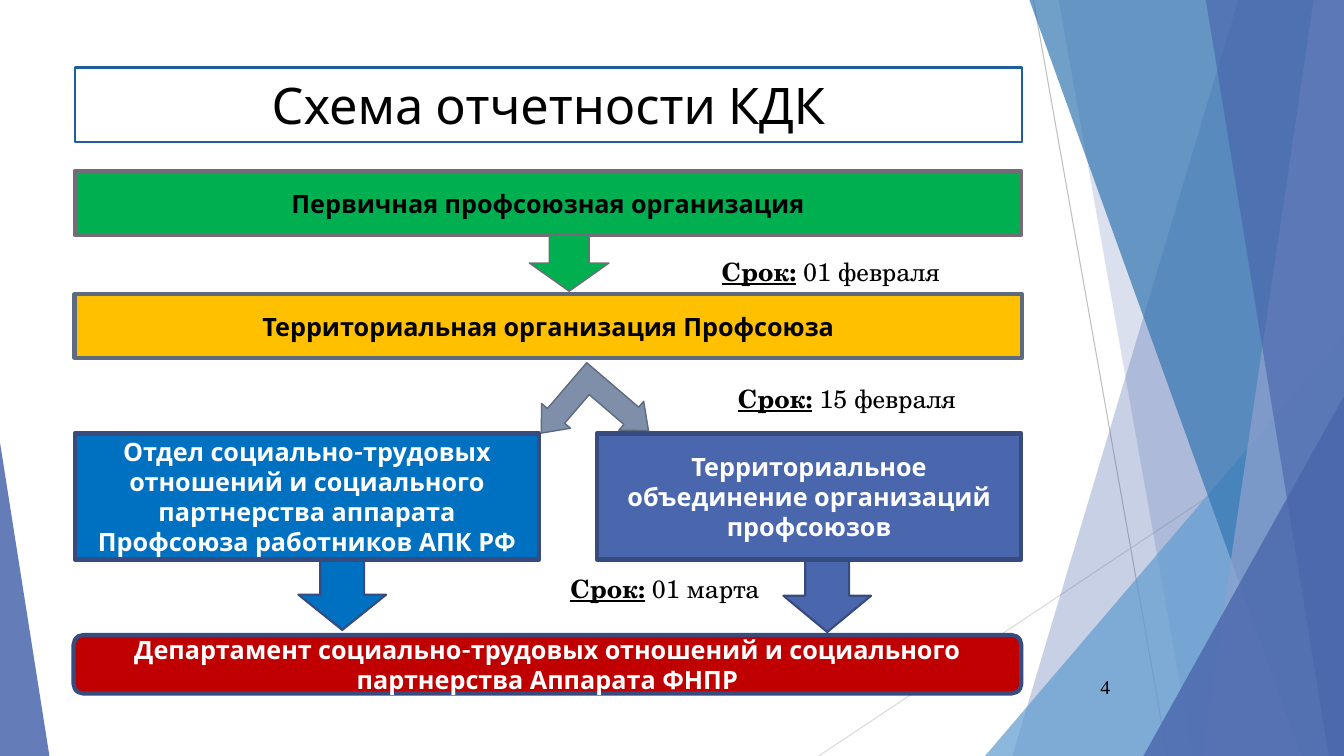
from lxml.etree import SubElement
from pptx import Presentation
from pptx.dml.color import RGBColor
from pptx.enum.shapes import MSO_CONNECTOR, MSO_SHAPE
from pptx.enum.text import MSO_ANCHOR, PP_ALIGN
from pptx.oxml.ns import qn
from pptx.util import Inches, Pt


def color(hex_string):
    return RGBColor.from_string(hex_string)


class ReportingSlide:
    """Draws the elements of the reporting scheme on one slide in a shared style."""

    heading_font = "Karla"
    deadline_font = "TeX Gyre Schola"
    number_font = "Times New Roman"

    def __init__(self, slide):
        self.shapes = slide.shapes

    def paint(self, shape, fill, line=None, width=1, alpha=100):
        shape.shadow.inherit = False
        shape.fill.solid()
        shape.fill.fore_color.rgb = color(fill)
        if alpha < 100:
            tint = shape.fill._xPr.find(qn("a:solidFill"))[0]
            SubElement(tint, qn("a:alpha"), val=str(alpha * 1000))
        if line:
            shape.line.color.rgb = color(line)
            shape.line.width = Pt(width)
        else:
            shape.line.fill.background()

    def figure(self, preset, bounds, fill, line=None, width=1, alpha=100, adjust=(), rotation=0):
        shape = self.shapes.add_shape(preset, *map(Inches, bounds))
        for index, value in enumerate(adjust):
            shape.adjustments[index] = value
        shape.rotation = rotation
        self.paint(shape, fill, line, width, alpha)
        return shape

    def facet(self, top_left, bottom_left, fill, alpha):
        corners = [(13.33, 0), (13.33, 7.5), (bottom_left, 7.5)]
        builder = self.shapes.build_freeform(Inches(top_left), 0)
        builder.add_line_segments([(Inches(x), Inches(y)) for x, y in corners])
        self.paint(builder.convert_to_shape(), fill, alpha=alpha)

    def ray(self, start, end, line):
        ends = map(Inches, (*start, *end))
        connector = self.shapes.add_connector(MSO_CONNECTOR.STRAIGHT, *ends)
        connector.line.color.rgb = color(line)
        connector.line.width = Pt(0.75)
        SubElement(connector._element.spPr, qn("a:effectLst"))

    def style(self, paragraph, font, size, ink="000000", bold=None, align=PP_ALIGN.LEFT):
        paragraph.alignment = align
        paragraph.font.name = font
        paragraph.font.size = Pt(size)
        paragraph.font.color.rgb = color(ink)
        paragraph.font.bold = bold

    def box(self, text, bounds, fill, line, ink="FFFFFF", size=18, width=3, bold=True,
            preset=MSO_SHAPE.RECTANGLE):
        frame = self.figure(preset, bounds, fill, line, width).text_frame
        frame.word_wrap = True
        frame.vertical_anchor = MSO_ANCHOR.MIDDLE
        frame.text = text
        self.style(frame.paragraphs[0], self.heading_font, size, ink, bold, PP_ALIGN.CENTER)

    def label(self, bounds):
        frame = self.shapes.add_textbox(*map(Inches, bounds)).text_frame
        frame.word_wrap = True
        return frame

    def deadline(self, date, left, top, width):
        paragraph = self.label((left, top, width, 0.4)).paragraphs[0]
        self.style(paragraph, self.deadline_font, 18)
        term = paragraph.add_run()
        term.text = "Срок:"
        term.font.bold = term.font.underline = True
        paragraph.add_run().text = f" {date}"

    def number(self, text, bounds):
        frame = self.label(bounds)
        frame.vertical_anchor = MSO_ANCHOR.MIDDLE
        frame.text = text
        self.style(frame.paragraphs[0], self.number_font, 14, align=PP_ALIGN.RIGHT)


def main():
    presentation = Presentation()
    presentation.slide_width = Inches(13.33)
    presentation.slide_height = Inches(7.5)
    scheme = ReportingSlide(presentation.slides.add_slide(presentation.slide_layouts[6]))
    triangle, down = MSO_SHAPE.ISOSCELES_TRIANGLE, MSO_SHAPE.DOWN_ARROW

    scheme.ray((10.25, 0), (11.58, 7.5), "BFBFBF")
    scheme.ray((13.33, 4.03), (8.12, 7.5), "D9D9D9")
    scheme.facet(12.28, 10.04, "4A66AC", 30)
    scheme.facet(10.5, 11.83, "4A66AC", 20)
    scheme.figure(triangle, (9.77, 3.33, 3.56, 4.17), "629DD1", alpha=72, adjust=[1])
    scheme.facet(10.21, 12.91, "3477B2", 70)
    scheme.facet(13.03, 11.92, "90A2CF", 70)
    scheme.facet(11.96, 13.18, "4A66AC", 65)
    scheme.figure(triangle, (11.34, 3.93, 1.99, 3.57), "4A66AC", alpha=80, adjust=[1])
    scheme.figure(triangle, (0, 4.39, 0.49, 3.11), "4A66AC", alpha=85, adjust=[0])

    scheme.box("Схема отчетности КДК", (0.74, 0.67, 9.4, 0.74), "FFFFFF", "1E5E9E",
               ink="000000", size=36, width=1.5, bold=False)
    scheme.number("4", (10.14, 6.61, 0.97, 0.4))

    scheme.box("Первичная профсоюзная организация", (0.74, 1.7, 9.39, 0.63),
               "00B050", "746B76", ink="000000")
    scheme.figure(down, (5.25, 2.33, 0.79, 0.56), "00B050", "746B76")
    scheme.box("Территориальная организация Профсоюза", (0.74, 2.92, 9.4, 0.63),
               "FFC000", "5E6A7D", ink="000000")

    scheme.figure(down, (2.96, 5.55, 0.87, 0.7), "0070C0", "374B7F", 1.5)
    scheme.figure(down, (7.77, 5.55, 0.87, 0.72), "4A66AC", "374B7F", 1.5)
    scheme.box("Отдел социально-трудовых отношений и социального партнерства аппарата "
               "Профсоюза работников АПК РФ", (0.74, 4.3, 4.61, 1.25), "0070C0", "374B7F")
    scheme.box("Территориальное объединение организаций профсоюзов",
               (5.92, 4.3, 4.21, 1.25), "4A66AC", "374B7F")
    scheme.figure(MSO_SHAPE.LEFT_UP_ARROW, (5.4, 3.7, 0.98, 0.9), "7F8FA9", "5E6A7D",
                  adjust=[0.25, 0.21, 0.25], rotation=220.6)
    scheme.box("Департамент социально-трудовых отношений и социального партнерства "
               "Аппарата ФНПР", (0.73, 6.3, 9.4, 0.58), "C00000", "374B7F",
               preset=MSO_SHAPE.ROUNDED_RECTANGLE)

    scheme.deadline("01 февраля", 7.06, 2.49, 2.91)
    scheme.deadline("15 февраля", 7.22, 3.75, 2.91)
    scheme.deadline("01 марта", 5.56, 5.64, 3.07)

    presentation.save("out.pptx")


if __name__ == "__main__":
    main()
